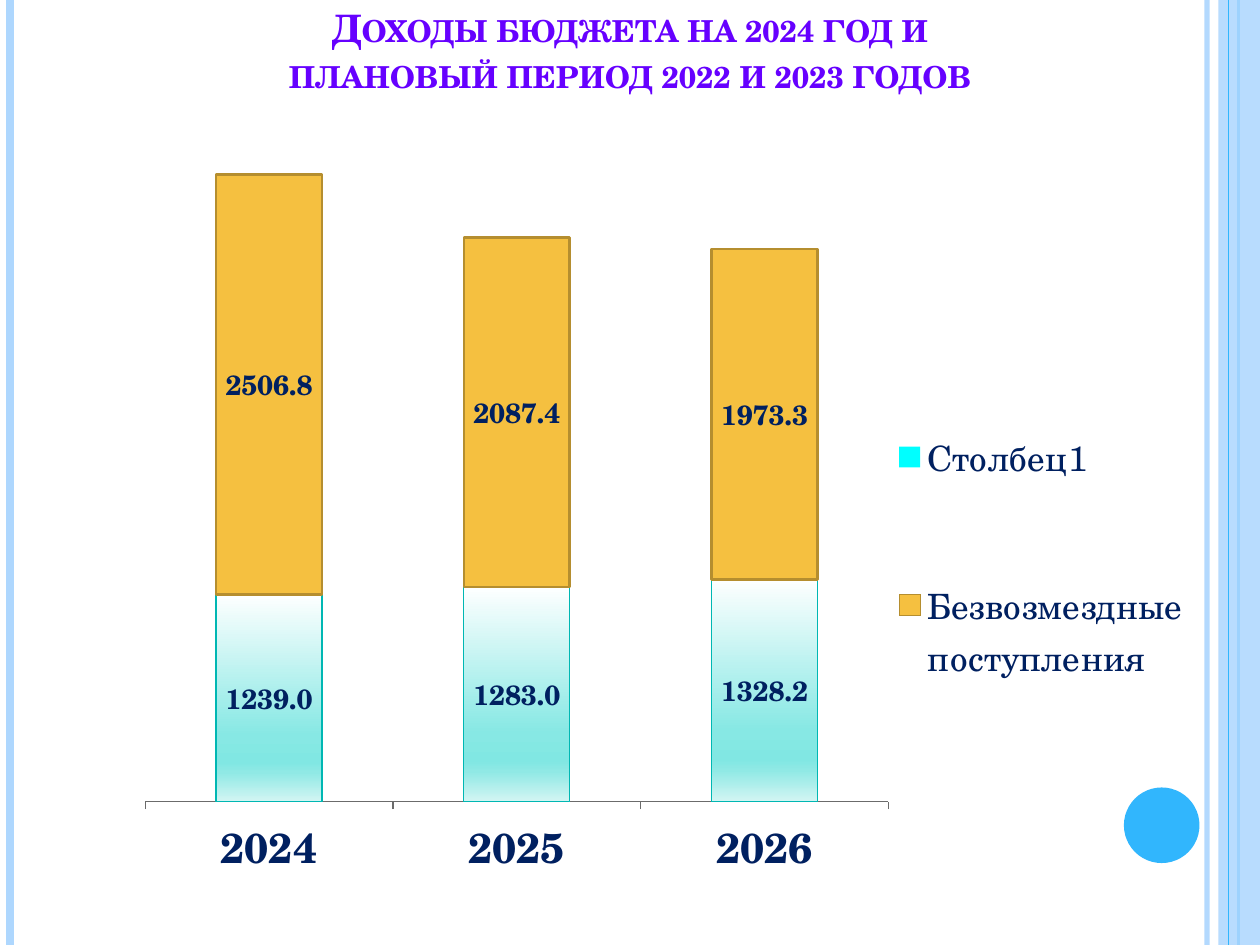
from lxml.etree import SubElement
from pptx import Presentation
from pptx.chart.data import CategoryChartData
from pptx.dml.color import RGBColor
from pptx.enum.chart import XL_CHART_TYPE, XL_LEGEND_POSITION, XL_TICK_LABEL_POSITION, XL_TICK_MARK
from pptx.enum.shapes import MSO_CONNECTOR, MSO_SHAPE
from pptx.enum.text import MSO_ANCHOR, MSO_AUTO_SIZE, PP_ALIGN
from pptx.oxml import parse_xml
from pptx.oxml.ns import nsdecls, qn
from pptx.util import Inches, Pt

WIDTH, HEIGHT = 10, 7.5
FONT = "TeX Gyre Schola"
COLORS = {
    "pale": "AED7FE", "sky": "31B6FD", "title": "6600FF", "navy": "002060",
    "gold": "F5C040", "gold_line": "B58E2F", "teal_line": "00B7B3",
    "cyan": "00FFFF", "axis": "6B6B6B", "text": "000000",
}
TEAL_STOPS = [(0, "FEFFFF"), (68, "87E8E4"), (81, "81E7E3"), (86, "90E9E5"), (100, "D3F5F3")]


def color(name):
    return RGBColor.from_string(COLORS[name])


def set_alpha(color_format_parent, percent):
    for node in color_format_parent.iter(qn("a:srgbClr")):
        SubElement(node, qn("a:alpha")).set("val", str(percent * 1000))


def style_font(font, size, name, bold=False):
    font.name, font.size, font.bold = FONT, Pt(size), bold
    font.color.rgb = color(name)


def add_rule(slide, x, name, weight, alpha=None):
    rule = slide.shapes.add_connector(
        MSO_CONNECTOR.STRAIGHT, Inches(x), 0, Inches(x), Inches(HEIGHT))
    rule.line.color.rgb = color(name)
    rule.line.width = Pt(weight)
    properties = rule._element.spPr
    if alpha:
        set_alpha(properties, alpha)
    SubElement(properties, qn("a:effectLst"))


def add_plain_shape(slide, kind, box, name, alpha=None):
    shape = slide.shapes.add_shape(kind, *map(Inches, box))
    shape.shadow.inherit = False
    shape.fill.solid()
    shape.fill.fore_color.rgb = color(name)
    shape.line.fill.background()
    if alpha:
        set_alpha(shape._element.spPr, alpha)


def add_frame(slide):
    add_rule(slide, 9.58, "pale", 3, 93)
    add_rule(slide, 0.08, "pale", 4.5)
    add_rule(slide, 9.83, "sky", 1.5)
    add_plain_shape(slide, MSO_SHAPE.RECTANGLE, (9.67, 0, 0.33, HEIGHT), "pale", 87)
    add_rule(slide, 9.75, "sky", 0.75)
    add_plain_shape(slide, MSO_SHAPE.OVAL, (8.92, 6.25, 0.6, 0.6), "sky")


def add_title(slide, box):
    title = slide.shapes.title
    title.left, title.top, title.width, title.height = map(Inches, box)
    frame = title.text_frame
    frame.auto_size = MSO_AUTO_SIZE.NONE
    frame.word_wrap = True
    frame.vertical_anchor = MSO_ANCHOR.BOTTOM
    frame.margin_bottom = Inches(0.41)
    frame.text = "Доходы бюджета на 2024 год и\vплановый период 2022 и 2023 годов"
    paragraph = frame.paragraphs[0]
    paragraph.alignment = PP_ALIGN.CENTER
    style_font(paragraph.font, 21.6, "title", True)
    for run in paragraph.runs:
        run._r.get_or_add_rPr().set("cap", "small")


def set_layout(element, index, shares, inner=False):
    for layout in element.findall(qn("c:layout")):
        element.remove(layout)
    target = '<c:layoutTarget val="inner"/>' if inner else ""
    modes = "".join(f'<c:{axis}Mode val="edge"/>' for axis in "xy")
    sizes = "".join(f'<c:{side} val="{share}"/>' for side, share in zip("xywh", shares))
    element.insert(index, parse_xml(
        f'<c:layout {nsdecls("c")}><c:manualLayout>{target}{modes}{sizes}'
        "</c:manualLayout></c:layout>"))


def fill_teal(series):
    series.format.fill.gradient()
    series.format.fill.gradient_angle = 270
    stops = next(series._element.iter(qn("a:gsLst")))
    for stop in list(stops):
        stops.remove(stop)
    for position, value in TEAL_STOPS:
        stop = SubElement(stops, qn("a:gs"), pos=str(position * 1000))
        SubElement(stop, qn("a:srgbClr"), val=value)


def fill_solid(series, name):
    series.format.fill.solid()
    series.format.fill.fore_color.rgb = color(name)


def outline_and_label(series, name, weight):
    series.format.line.color.rgb = color(name)
    series.format.line.width = Pt(weight)
    labels = series.data_labels
    labels.show_value = True
    labels.number_format = "0.0"
    labels.number_format_is_linked = False
    style_font(labels.font, 16, "navy", True)


def style_axes(chart):
    categories = chart.category_axis
    categories.major_tick_mark = XL_TICK_MARK.OUTSIDE
    categories.tick_label_position = XL_TICK_LABEL_POSITION.LOW
    categories.format.line.color.rgb = color("axis")
    style_font(categories.tick_labels.font, 24, "navy", True)
    values = chart.value_axis
    values.visible = False
    values.has_major_gridlines = False
    values.minimum_scale = 0
    values.major_unit = 20


def add_legend(chart):
    chart.has_legend = True
    legend = chart.legend
    legend.position = XL_LEGEND_POSITION.RIGHT
    legend.include_in_layout = False
    style_font(legend.font, 20, "navy")
    set_layout(legend._element, 1, (0.72, 0.27, 0.28, 0.6))
    legend._element.insert(1, parse_xml(
        f'<c:legendEntry {nsdecls("c")}><c:idx val="0"/><c:delete val="1"/></c:legendEntry>'))


def add_income_chart(slide, box):
    data = CategoryChartData(number_format="0.0")
    data.categories = ["2024", "2025", "2026"]
    data.add_series("Series 1", (1239, 1283, 1328.2))
    data.add_series("Безвозмездные поступления", (2506.8, 2087.4, 1973.3))
    data.add_series("Столбец1", (None, None, None))
    chart = slide.shapes.add_chart(
        XL_CHART_TYPE.COLUMN_STACKED, *map(Inches, box), data).chart
    chart.has_title = False
    style_font(chart.font, 9.7, "text")
    plot = chart.plots[0]
    plot.gap_width, plot.overlap = 134, 100
    plot.vary_by_categories = False
    own_income, transfers, empty_column = plot.series
    fill_teal(own_income)
    outline_and_label(own_income, "teal_line", 0.75)
    fill_solid(transfers, "gold")
    outline_and_label(transfers, "gold_line", 1.5)
    fill_solid(empty_column, "cyan")
    style_axes(chart)
    add_legend(chart)
    plot_area = next(chart._chartSpace.iter(qn("c:plotArea")))
    set_layout(plot_area, 0, (0.046, 0.046, 0.675, 0.854), inner=True)


def main():
    presentation = Presentation()
    presentation.slide_width, presentation.slide_height = Inches(WIDTH), Inches(HEIGHT)
    slide = presentation.slides.add_slide(presentation.slide_layouts[5])
    add_frame(slide)
    add_title(slide, (0.5, 0.3, 9, 0.87))
    add_income_chart(slide, (0.75, 1.07, 8.74, 5.91))
    presentation.save("out.pptx")


if __name__ == "__main__":
    main()
